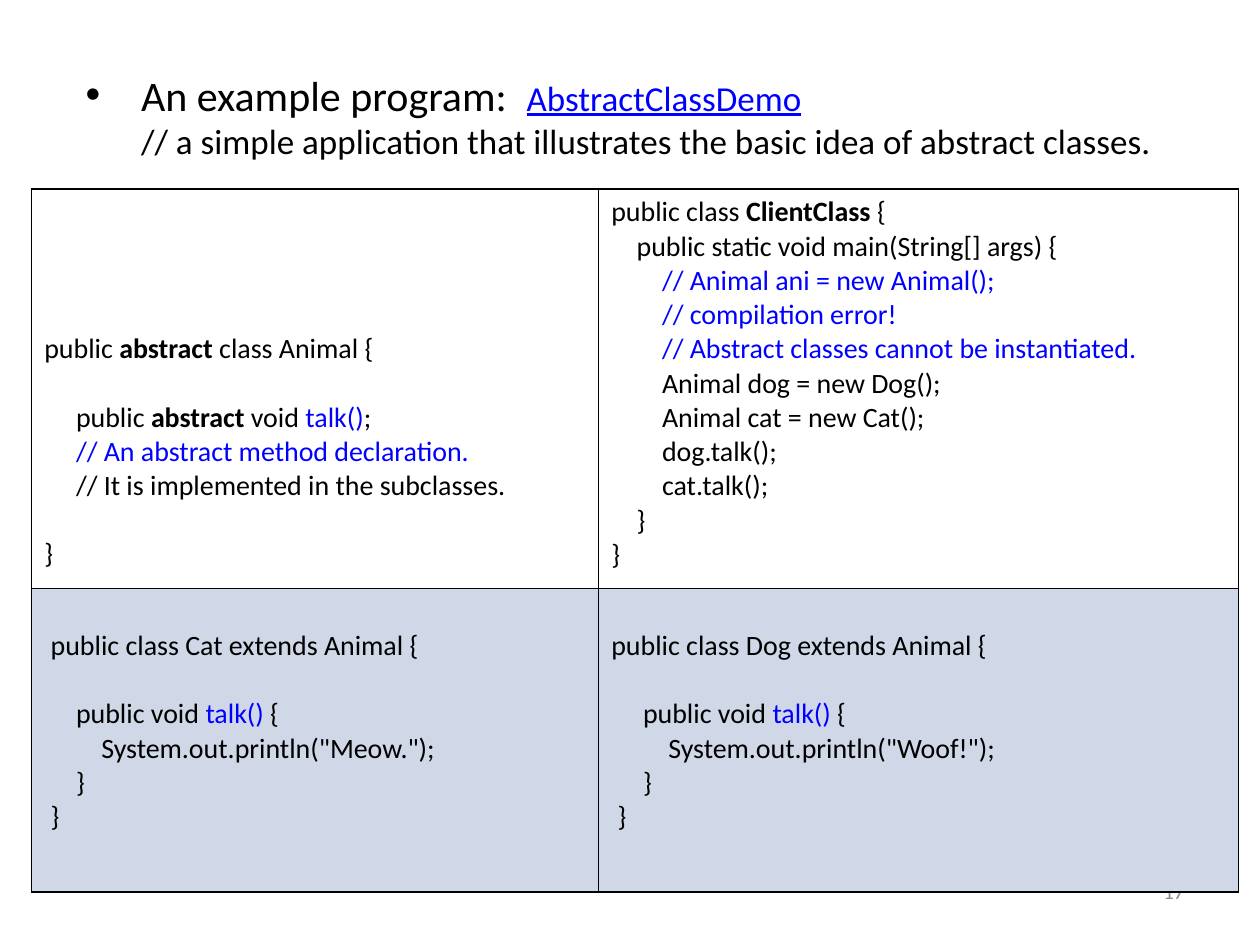
from lxml.etree import SubElement
from pptx import Presentation
from pptx.dml.color import RGBColor
from pptx.enum.text import MSO_ANCHOR as Anchor, MSO_AUTO_SIZE as AutoSize, PP_ALIGN as Align
from pptx.oxml.ns import qn
from pptx.util import Cm, Pt

FONT = "Calibri"
BLACK, BLUE, GREY, WHITE, PALE = "000000", "0000FF", "8C8C8C", "FFFFFF", "D0D8E8"
CODE_SIZE = 16
LINE = 19.53   # height of one code line, in points
SPACE = 3.62   # width of one code space, in points

# Content: spans are (text, style), with style "" plain, "b" bold or "c" blue
HEADING = ("An example program: ", "\t", "AbstractClassDemo")
REMARK = "// a simple application that illustrates the basic idea of abstract classes."
PAGE_NUMBER = "17"


def subclass_lines(name, sound, indent):
    return [
        (1, indent, [(f"public class {name} extends Animal {{", "")]),
        (1, 5, [("public void ", ""), ("talk()", "c"), (" {", "")]),
        (0, 9, [(f'System.out.println("{sound}");', "")]),
        (0, 5, [("}", "")]),
        (0, 1, [("}", "")]),
    ]


# Code lines: (lines left open above, indent in spaces, spans)
ANIMAL = [
    (4, 0, [("public ", ""), ("abstract", "b"), (" class Animal {", "")]),
    (1, 5, [("public ", ""), ("abstract", "b"), (" void ", ""), ("talk()", "c"), (";", "")]),
    (0, 5, [("// An abstract method declaration.", "c")]),
    (0, 5, [("// It is implemented in the subclasses.", "")]),
    (1, 0, [("}", "")]),
]
CLIENT = [
    (0, 0, [("public class ", ""), ("ClientClass", "b"), (" {", "")]),
    (0, 4, [("public static void main(String[] args) {", "")]),
    (0, 8, [("// Animal ani = new Animal();", "c")]),
    (0, 8, [("// compilation error!", "c")]),
    (0, 8, [("// Abstract classes cannot be instantiated.", "c")]),
    (0, 8, [("Animal dog = new Dog();", "")]),
    (0, 8, [("Animal cat = new Cat();", "")]),
    (0, 8, [("dog.talk();", "")]),
    (0, 8, [("cat.talk();", "")]),
    (0, 4, [("}", "")]),
    (0, 0, [("}", "")]),
]
ROWS = [
    (8.05, WHITE, [ANIMAL, CLIENT]),
    (6.12, PALE, [subclass_lines("Cat", "Meow.", 1), subclass_lines("Dog", "Woof!", 0)]),
]
COLUMNS = [11.43, 12.9]


def colour(value):
    return RGBColor.from_string(value)


def add_span(para, text, size, ink=BLACK, bold=False, underline=False):
    span = para.add_run()
    span.text = text
    font = span.font
    font.name, font.size, font.bold, font.underline = FONT, Pt(size), bold, underline
    font.color.rgb = colour(ink)


def outline_cell(cell):
    """Draw a thin black border on all four sides."""
    props = cell._tc.get_or_add_tcPr()
    for index, side in enumerate(("a:lnL", "a:lnR", "a:lnT", "a:lnB")):
        line = props.makeelement(qn(side), {"w": str(Pt(1))})
        SubElement(SubElement(line, qn("a:solidFill")), qn("a:srgbClr"), val=BLACK)
        props.insert(index, line)


def fill_cell(cell, lines, fill):
    cell.fill.solid()
    cell.fill.fore_color.rgb = colour(fill)
    outline_cell(cell)
    cell.margin_top = Pt(3.6 + lines[0][0] * LINE)
    frame = cell.text_frame
    for number, (gap, indent, spans) in enumerate(lines):
        para = frame.add_paragraph() if number else frame.paragraphs[0]
        if number and gap:
            para.space_before = Pt(gap * LINE)
        para._p.get_or_add_pPr().set("marL", str(Pt(indent * SPACE)))
        for text, style in spans:
            add_span(para, text, CODE_SIZE, BLUE if style == "c" else BLACK, style == "b")


deck = Presentation()
deck.slide_width, deck.slide_height = Cm(25.4), Cm(19.05)
page = deck.slides.add_slide(deck.slide_layouts[5])

# Title with a bullet and a hanging indent
title = page.shapes.title
title.left, title.top, title.width, title.height = Cm(1.47), Cm(1.27), Cm(22.86), Cm(2.11)
frame = title.text_frame
frame.word_wrap, frame.auto_size, frame.vertical_anchor = True, AutoSize.NONE, Anchor.MIDDLE
para = frame.paragraphs[0]
para.alignment = Align.LEFT
props = para._p.get_or_add_pPr()
props.set("marL", str(Cm(1.12)))
props.set("indent", str(-Cm(1.12)))
SubElement(props, qn("a:buFont"), typeface="Arial")
SubElement(props, qn("a:buChar"), char="•")
lead, tab, link = HEADING
add_span(para, lead, 24)
add_span(para, tab, 20)
add_span(para, link, 20, BLUE, underline=True)
para.add_line_break()
SubElement(para._p[-1], qn("a:rPr"), sz="2000")
add_span(para, REMARK, 20)

# Page number, partly behind the table
box = page.shapes.add_textbox(Cm(18.21), Cm(17.45), Cm(5.92), Cm(1.02))
box.text_frame.word_wrap = True
box.text_frame.vertical_anchor = Anchor.MIDDLE
para = box.text_frame.paragraphs[0]
para.alignment = Align.RIGHT
add_span(para, PAGE_NUMBER, 12, GREY)

# Code table
table = page.shapes.add_table(
    len(ROWS), len(COLUMNS), Cm(0.64), Cm(3.81),
    Cm(sum(COLUMNS)), Cm(sum(height for height, _, _ in ROWS))).table
table.first_row = table.horz_banding = False
for column, width in zip(table.columns, COLUMNS):
    column.width = Cm(width)
for row, (height, fill, blocks) in zip(table.rows, ROWS):
    row.height = Cm(height)
    for cell, lines in zip(row.cells, blocks):
        fill_cell(cell, lines, fill)

deck.save("out.pptx")
